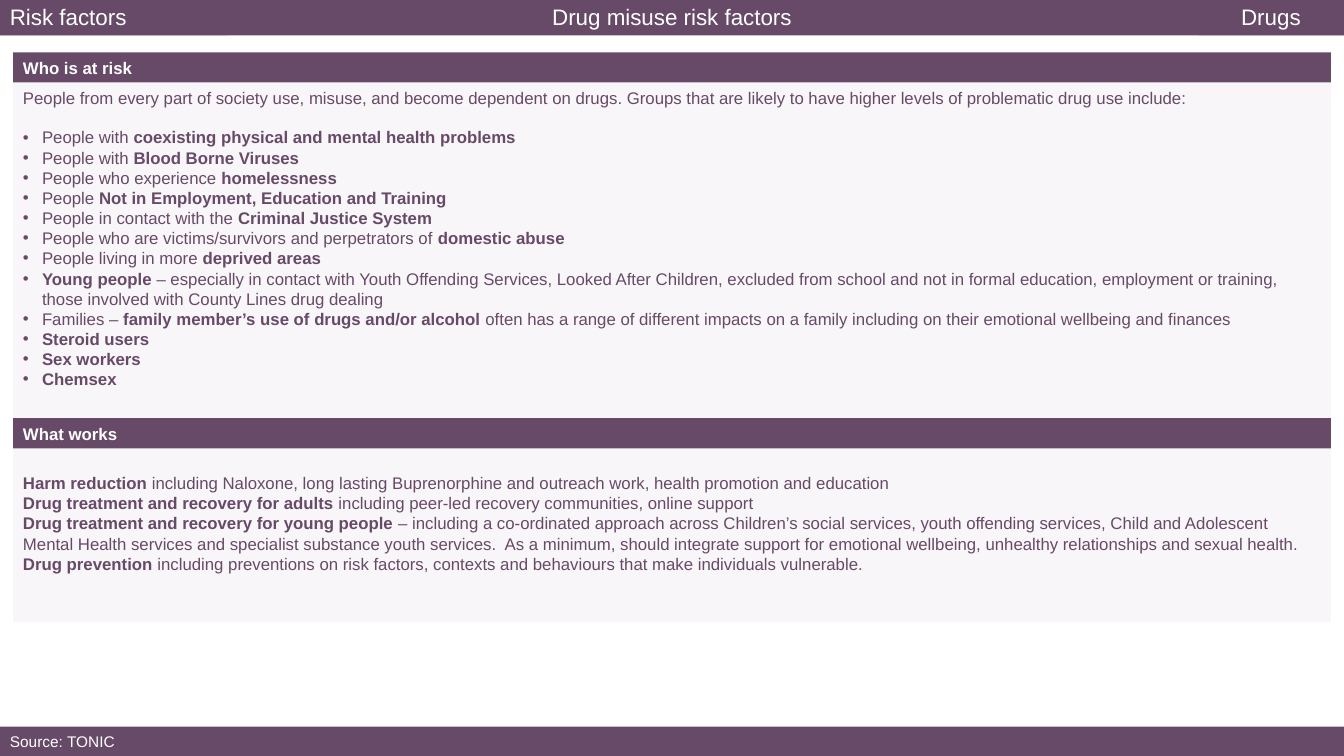
from lxml import etree
from pptx import Presentation
from pptx.dml.color import RGBColor
from pptx.enum.shapes import MSO_SHAPE as Shape
from pptx.enum.text import MSO_ANCHOR as Anchor, MSO_AUTO_SIZE as AutoSize, PP_ALIGN as Align
from pptx.oxml.ns import qn
from pptx.util import Cm, Pt

PLUM = RGBColor(0x67, 0x4A, 0x68)
PALE = RGBColor(0xF8, 0xF6, 0xF8)
WHITE = RGBColor(0xFF, 0xFF, 0xFF)
FONT = "Arial"
WIDTH, HEIGHT = 33.87, 19.05
INSET_X, INSET_Y = 0.25, 0.13
HEADING_HEIGHT = 0.76
BULLET_INDENT = 0.48
BLANK_LINE = 13.8

# Each paragraph is a list of (text, bold) runs
RISK_INTRO = [("People from every part of society use, misuse, and become dependent on drugs. "
               "Groups that are likely to have higher levels of problematic drug use include:", False)]
RISK_GROUPS = [
    [("People with ", False), ("coexisting physical and mental health problems", True)],
    [("People with ", False), ("Blood Borne Viruses", True)],
    [("People who experience ", False), ("homelessness", True)],
    [("People ", False), ("Not in Employment, Education and Training", True)],
    [("People in contact with the ", False), ("Criminal Justice System", True)],
    [("People who are victims/survivors and perpetrators of ", False), ("domestic abuse", True)],
    [("People living in more ", False), ("deprived areas", True)],
    [("Young people ", True),
     ("– especially in contact with Youth Offending Services, Looked After Children, excluded from "
      "school and not in formal education, employment or training, those involved with County Lines "
      "drug dealing", False)],
    [("Families – ", False), ("family member’s use of drugs and/or alcohol ", True),
     ("often has a range of different impacts on a family including on their emotional wellbeing "
      "and finances", False)],
    [("Steroid users", True)],
    [("Sex workers", True)],
    [("Chemsex", True)],
]
WHAT_WORKS = [
    [("Harm reduction ", True),
     ("including Naloxone, long lasting Buprenorphine and outreach work, health promotion and "
      "education", False)],
    [("Drug treatment and recovery for adults ", True),
     ("including peer-led recovery communities, online support", False)],
    [("Drug treatment and recovery for young people ", True),
     ("– including a co-ordinated approach across Children’s social services, youth offending "
      "services, Child and Adolescent Mental Health services and specialist substance youth "
      "services.  As a minimum, should integrate support for emotional wellbeing, unhealthy "
      "relationships and sexual health.", False)],
    [("Drug prevention ", True),
     ("including preventions on risk factors, contexts and behaviours that make individuals "
      "vulnerable.", False)],
]


def place(shape, left, top, width, height):
    shape.left, shape.top, shape.width, shape.height = Cm(left), Cm(top), Cm(width), Cm(height)


def prepare_box(shape, fill, anchor):
    """Fill the box and set up its text frame."""
    shape.fill.solid()
    shape.fill.fore_color.rgb = fill
    shape.line.fill.background()
    frame = shape.text_frame
    frame.word_wrap = True
    frame.auto_size = AutoSize.NONE
    frame.vertical_anchor = anchor
    frame.margin_left = frame.margin_right = Cm(INSET_X)
    frame.margin_top = frame.margin_bottom = Cm(INSET_Y)
    return frame


def add_box(slide, left, top, width, height, fill, anchor):
    shape = slide.shapes.add_shape(Shape.RECTANGLE, Cm(left), Cm(top), Cm(width), Cm(height))
    shape.shadow.inherit = False
    return prepare_box(shape, fill, anchor)


def format_paragraph(paragraph, size, color, align=Align.LEFT):
    paragraph.alignment = align
    paragraph.font.name = FONT
    paragraph.font.size = Pt(size)
    paragraph.font.color.rgb = color


def add_bullet(paragraph):
    properties = paragraph._p.get_or_add_pPr()
    properties.set("marL", str(Cm(BULLET_INDENT)))
    properties.set("indent", str(-Cm(BULLET_INDENT)))
    etree.SubElement(properties, qn("a:buFont"), typeface=FONT)
    etree.SubElement(properties, qn("a:buChar"), char="•")


def write_paragraphs(frame, paragraphs, bulleted=False):
    """Append paragraphs of mixed regular and bold runs."""
    for runs in paragraphs:
        paragraph = frame.paragraphs[0]
        if paragraph.runs:
            paragraph = frame.add_paragraph()
        if bulleted:
            add_bullet(paragraph)
        format_paragraph(paragraph, 12, PLUM)
        for text, bold in runs:
            run = paragraph.add_run()
            run.text = text
            run.font.bold = bold


def add_bar(slide, left, top, width, height, text, size, align=Align.LEFT):
    """Plum bar with one line of white text."""
    frame = add_box(slide, left, top, width, height, PLUM, Anchor.MIDDLE)
    frame.text = text
    format_paragraph(frame.paragraphs[0], size, WHITE, align)
    return frame


def add_header(slide, left, top, width, height):
    """Full-width title with a label at each end."""
    title = slide.shapes.title
    place(title, left, top, width, height)
    frame = prepare_box(title, PLUM, Anchor.MIDDLE)
    frame.text = "Drug misuse risk factors"
    format_paragraph(frame.paragraphs[0], 16, WHITE, Align.CENTER)
    section_width, topic_width = 5.74, 3.68
    add_bar(slide, left, top, section_width, height, "Risk factors", 16)
    add_bar(slide, left + width - topic_width, top, topic_width, height, "Drugs", 16, Align.CENTER)


def add_section(slide, left, top, width, height, heading):
    """Heading bar above a pale panel; returns the panel's text frame."""
    panel = add_box(slide, left, top + HEADING_HEIGHT, width, height - HEADING_HEIGHT,
                    PALE, Anchor.TOP)
    bar = add_bar(slide, left, top, width, HEADING_HEIGHT, heading, 12)
    bar.paragraphs[0].font.bold = True
    return panel


def add_risk_section(slide, left, top, width, height):
    panel = add_section(slide, left, top, width, height, "Who is at risk")
    write_paragraphs(panel, [RISK_INTRO])
    write_paragraphs(panel, RISK_GROUPS, bulleted=True)
    panel.paragraphs[1].space_before = Pt(BLANK_LINE)


def add_works_section(slide, left, top, width, height):
    panel = add_section(slide, left, top, width, height, "What works")
    panel.margin_top = Cm(INSET_Y) + Pt(BLANK_LINE)
    write_paragraphs(panel, WHAT_WORKS)


def main():
    presentation = Presentation()
    presentation.slide_width, presentation.slide_height = Cm(WIDTH), Cm(HEIGHT)
    slide = presentation.slides.add_slide(presentation.slide_layouts[5])

    # Header and footer
    add_header(slide, 0, -0.05, WIDTH, 0.94)
    footer_height = 0.74
    add_bar(slide, 0, HEIGHT - footer_height, WIDTH, footer_height, "Source: TONIC", 11)

    # Stacked sections
    margin, top, risk_height, works_height = 0.33, 1.32, 9.22, 5.13
    width = WIDTH - 2 * margin
    add_risk_section(slide, margin, top, width, risk_height)
    add_works_section(slide, margin, top + risk_height, width, works_height)

    presentation.save("out.pptx")


if __name__ == "__main__":
    main()
